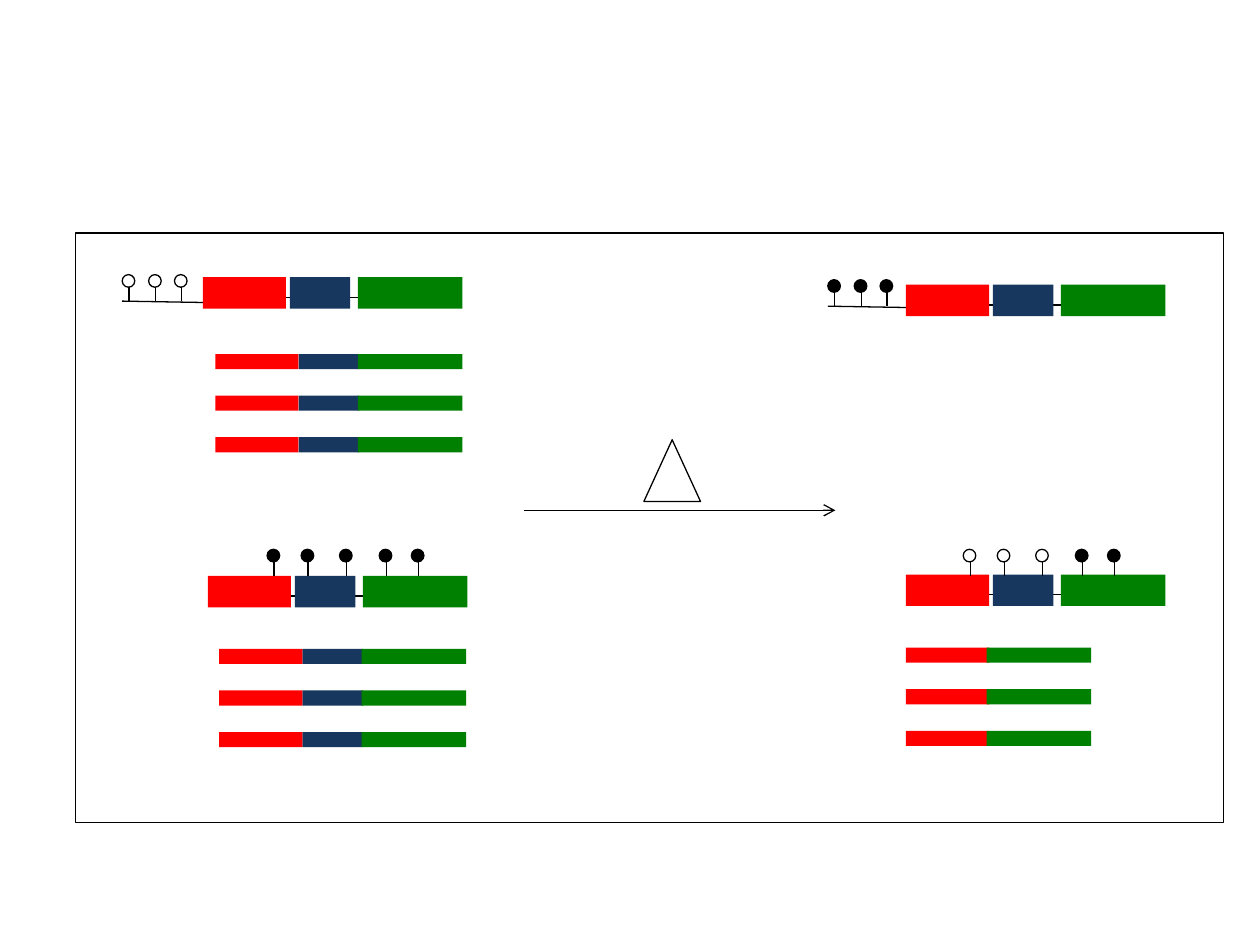
from dataclasses import dataclass

from lxml import etree
from pptx import Presentation
from pptx.dml.color import RGBColor
from pptx.enum import shapes as kinds
from pptx.oxml import ns
from pptx.util import Inches, Pt


@dataclass(frozen=True)
class Theme:
    ink: str = "000000"
    exon_1: str = "FF0000"
    exon_2: str = "17375E"
    exon_3: str = "008000"
    line_width: float = 0.75


THEME = Theme()
SHAPE = kinds.MSO_SHAPE
EXON_WIDTHS = {THEME.exon_1: 0.66, THEME.exon_2: 0.48, THEME.exon_3: 0.83}
GENE_OFFSETS = {THEME.exon_2: 0.69, THEME.exon_1: 0, THEME.exon_3: 1.23}
FULL_OFFSETS = {THEME.exon_2: 0.66, THEME.exon_1: 0, THEME.exon_3: 1.13}
SKIPPED_OFFSETS = {THEME.exon_1: 0, THEME.exon_3: 0.64}
PROMOTER_SITES = (0, 0.21, 0.415)
BODY_SITES = (0, 0.27, 0.575, 0.89, 1.145)


def add_figure(shapes, kind, left, top, width, height, fill=None, outlined=True):
    figure = shapes.add_shape(kind, Inches(left), Inches(top), Inches(width), Inches(height))
    figure.shadow.inherit = False
    if fill:
        figure.fill.solid()
        figure.fill.fore_color.rgb = RGBColor.from_string(fill)
    else:
        figure.fill.background()
    if outlined:
        figure.line.color.rgb = RGBColor.from_string(THEME.ink)
        figure.line.width = Pt(THEME.line_width)
    else:
        figure.line.fill.background()


def add_line(shapes, x1, y1, x2, y2, arrow=False):
    line = shapes.add_connector(kinds.MSO_CONNECTOR.STRAIGHT,
                                Inches(x1), Inches(y1), Inches(x2), Inches(y2))
    line.line.color.rgb = RGBColor.from_string(THEME.ink)
    line.line.width = Pt(THEME.line_width)
    if arrow:
        etree.SubElement(line.line._get_or_add_ln(), ns.qn("a:tailEnd"), type="arrow")
    etree.SubElement(line._element.spPr, ns.qn("a:effectLst"))


def add_exons(shapes, left, top, height, offsets):
    for colour, offset in offsets.items():
        add_figure(shapes, SHAPE.RECTANGLE, left + offset, top,
                   EXON_WIDTHS[colour], height, fill=colour, outlined=False)


def add_gene(shapes, left, top):
    add_line(shapes, left + 1.81, top + 0.16, left + 0.08, top + 0.16)
    add_exons(shapes, left, top, 0.25, GENE_OFFSETS)


def add_transcripts(shapes, left, top, offsets, count=3, pitch=0.33):
    for row in range(count):
        add_exons(shapes, left, top + row * pitch, 0.12, offsets)


def add_sites(shapes, left, top, offsets, methylated):
    """Draw lollipops, filled where the matching flag in methylated is true."""
    for offset, filled in zip(offsets, methylated):
        site = shapes.add_group_shape().shapes
        x = left + offset
        add_figure(site, SHAPE.OVAL, x, top, 0.1, 0.1, fill=THEME.ink if filled else None)
        add_line(site, x + 0.055, top + 0.1, x + 0.055, top + 0.21)


def add_promoter(shapes, left, top, methylated):
    add_sites(shapes, left, top, PROMOTER_SITES, [methylated] * len(PROMOTER_SITES))
    add_line(shapes, left + 1.18, top + 0.23, left, top + 0.21)


def add_active_promoter(shapes, left, top):
    add_promoter(shapes, left, top, methylated=False)
    add_gene(shapes, left + 0.64, top + 0.02)
    add_transcripts(shapes, left + 0.74, top + 0.63, FULL_OFFSETS)


def add_silenced_promoter(shapes, left, top):
    add_promoter(shapes, left, top, methylated=True)
    add_gene(shapes, left + 0.62, top + 0.04)


def add_methylated_body(shapes, left, top):
    add_gene(shapes, left, top + 0.21)
    add_transcripts(shapes, left + 0.09, top + 0.79, FULL_OFFSETS)
    add_sites(shapes, left + 0.47, top, BODY_SITES, (1, 1, 1, 1, 1))


def add_demethylated_body(shapes, left, top):
    add_gene(shapes, left, top + 0.2)
    add_transcripts(shapes, left, top + 0.78, SKIPPED_OFFSETS)
    add_sites(shapes, left + 0.455, top, BODY_SITES, (0, 0, 0, 1, 1))


def add_change_arrow(shapes, left, top):
    add_figure(shapes, SHAPE.ISOSCELES_TRIANGLE, left + 0.95, top, 0.45, 0.49)
    add_line(shapes, left, top + 0.56, left + 2.47, top + 0.56, arrow=True)


def main():
    deck = Presentation()
    deck.slide_width, deck.slide_height = Inches(10), Inches(7.5)
    shapes = deck.slides.add_slide(deck.slide_layouts[6]).shapes
    add_figure(shapes, SHAPE.RECTANGLE, 0.6, 1.85, 9.11, 4.68)
    add_active_promoter(shapes, 0.97, 2.18)
    add_silenced_promoter(shapes, 6.57, 2.22)
    add_methylated_body(shapes, 1.65, 4.36)
    add_demethylated_body(shapes, 7.19, 4.36)
    add_change_arrow(shapes, 4.16, 3.49)
    deck.save("out.pptx")


if __name__ == "__main__":
    main()
